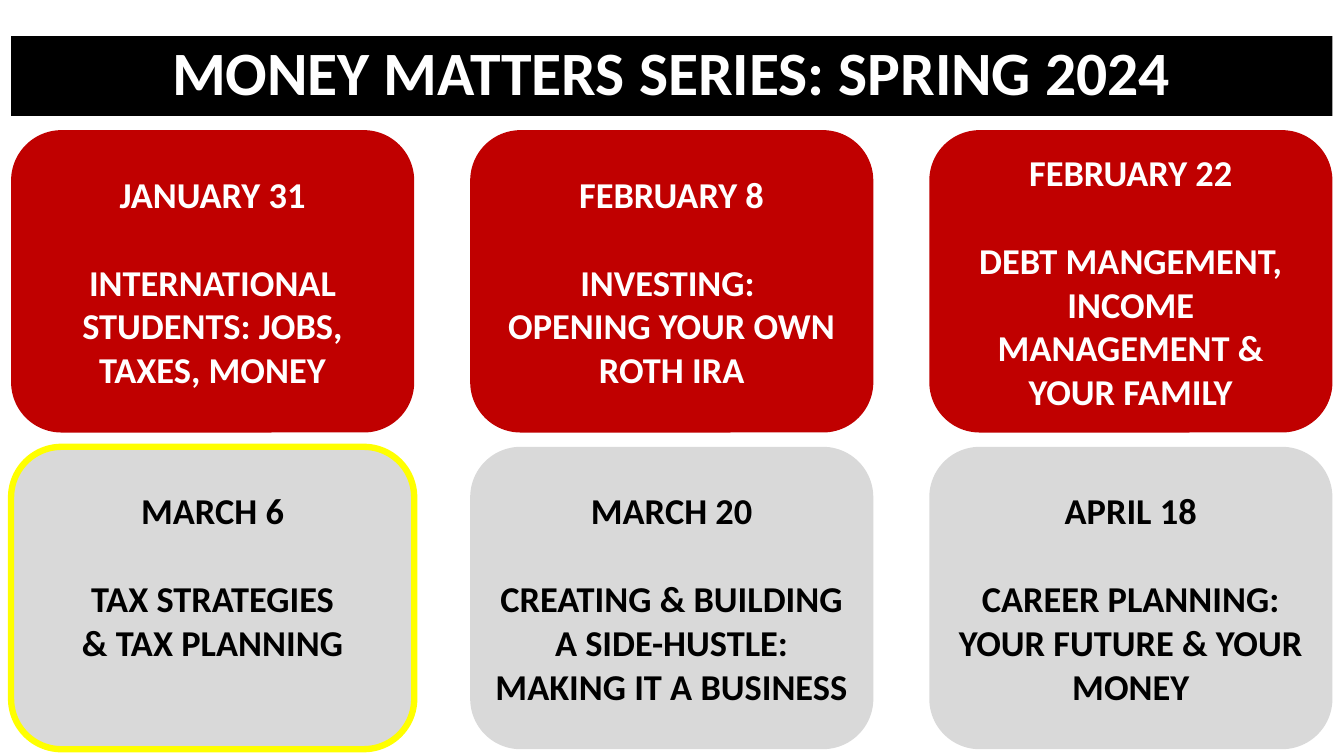
import pptx
import pptx.dml.color
import pptx.enum.shapes
import pptx.enum.text
import pptx.util

Cm = pptx.util.Cm
Pt = pptx.util.Pt
COLORS = {"black": "000000", "white": "FFFFFF", "red": "C00000", "gray": "D9D9D9", "yellow": "FFFF00"}
LEFT, TOP = 0.28, 3.28
CARD_WIDTH, CARD_HEIGHT = 10.16, 7.62
COLUMN_STEP, ROW_STEP = 11.57, 7.98

ROWS = [
    ("red", "white", [
        ("JANUARY 31", "INTERNATIONAL STUDENTS: JOBS, TAXES, MONEY"),
        ("FEBRUARY 8", "INVESTING: \nOPENING YOUR OWN ROTH IRA"),
        ("FEBRUARY 22", "DEBT MANGEMENT, INCOME MANAGEMENT & YOUR FAMILY"),
    ]),
    ("gray", "black", [
        ("MARCH 6", "TAX STRATEGIES\n& TAX PLANNING"),
        ("MARCH 20", "CREATING & BUILDING A SIDE-HUSTLE: MAKING IT A BUSINESS"),
        ("APRIL 18", "CAREER PLANNING: YOUR FUTURE & YOUR MONEY"),
    ]),
]
HIGHLIGHTED = "MARCH 6"


def rgb(name):
    return pptx.dml.color.RGBColor.from_string(COLORS[name])


def write(paragraph, text, size, color):
    paragraph.alignment = pptx.enum.text.PP_ALIGN.CENTER
    for index, line in enumerate(text.split("\n")):
        if index:
            paragraph.add_line_break()
        run = paragraph.add_run()
        run.text = line
        run.font.name = "Calibri"
        run.font.size = Pt(size)
        run.font.bold = True
        run.font.color.rgb = rgb(color)


presentation = pptx.Presentation()
presentation.slide_width = Cm(33.87)
presentation.slide_height = Cm(19.05)
slide = presentation.slides.add_slide(presentation.slide_layouts.get_by_name("Title Only"))

title = slide.shapes.title
title.left, title.top, title.width, title.height = Cm(LEFT), Cm(0.91), Cm(33.3), Cm(2.01)
title.fill.solid()
title.fill.fore_color.rgb = rgb("black")
title.text_frame.auto_size = pptx.enum.text.MSO_AUTO_SIZE.NONE
title.text_frame.vertical_anchor = pptx.enum.text.MSO_ANCHOR.MIDDLE
heading = title.text_frame.paragraphs[0]
heading.line_spacing = 0.9
write(heading, "MONEY MATTERS SERIES: SPRING 2024", 44, "white")

for row, (fill_color, text_color, sessions) in enumerate(ROWS):
    for column, (date, topic) in enumerate(sessions):
        card = slide.shapes.add_shape(
            pptx.enum.shapes.MSO_SHAPE.ROUNDED_RECTANGLE,
            Cm(LEFT + column * COLUMN_STEP), Cm(TOP + row * ROW_STEP),
            Cm(CARD_WIDTH), Cm(CARD_HEIGHT),
        )
        card.shadow.inherit = False
        card.fill.solid()
        card.fill.fore_color.rgb = rgb(fill_color)
        text_frame = card.text_frame
        text_frame.word_wrap = True
        text_frame.vertical_anchor = pptx.enum.text.MSO_ANCHOR.MIDDLE
        if date == HIGHLIGHTED:
            card.line.color.rgb = rgb("yellow")
            card.line.width = Pt(4.5)
            text_frame.margin_bottom = Cm(1.25)
        else:
            card.line.fill.background()
        write(text_frame.paragraphs[0], date, 26, text_color)
        topic_paragraph = text_frame.add_paragraph()
        topic_paragraph.space_before = Pt(31.7)
        write(topic_paragraph, topic, 26, text_color)

presentation.save("out.pptx")
